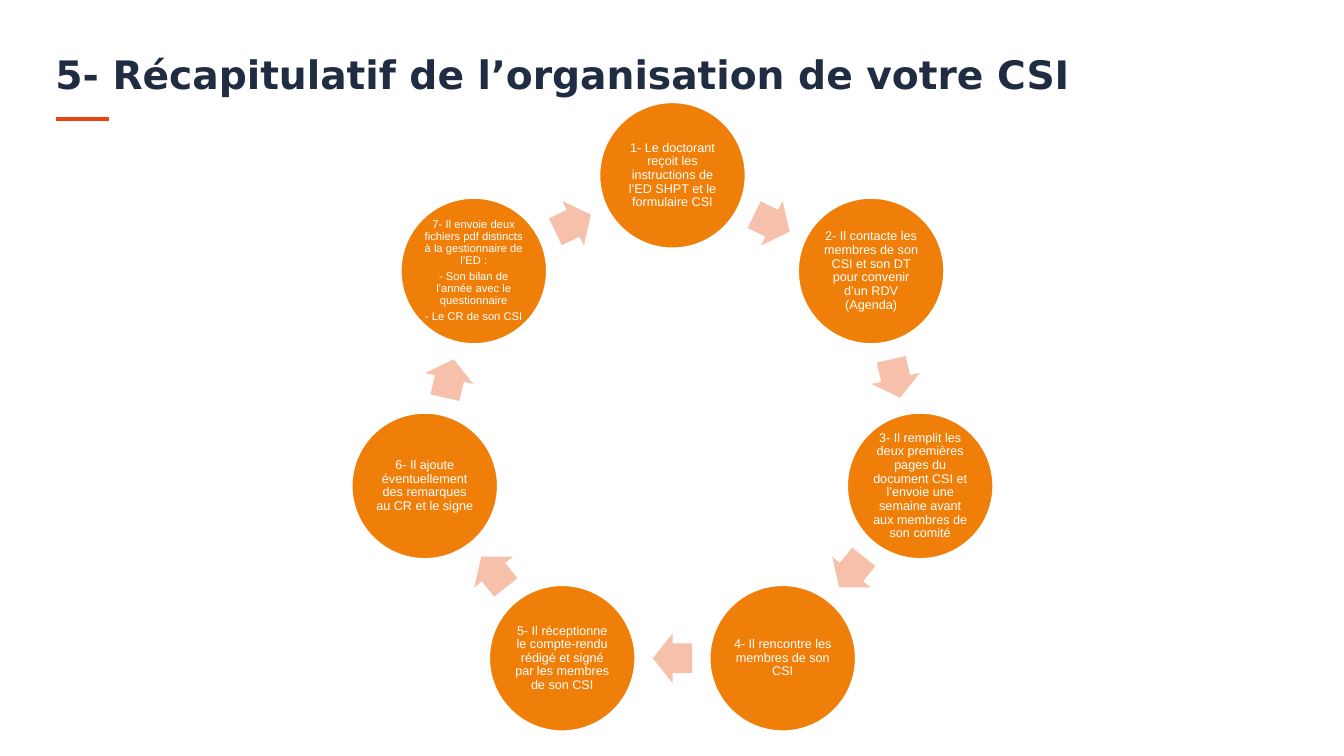
"""Build the slide that sums up the seven steps of the CSI as a cycle."""
from math import cos, pi, sin

from lxml import etree
from pptx import Presentation
from pptx.dml.color import RGBColor
from pptx.enum.shapes import MSO_CONNECTOR, MSO_SHAPE
from pptx.enum.text import MSO_ANCHOR, MSO_AUTO_SIZE, PP_ALIGN
from pptx.oxml.ns import qn
from pptx.util import Inches, Pt

OVAL, ARROW = MSO_SHAPE.OVAL, MSO_SHAPE.RIGHT_ARROW
LINE = MSO_CONNECTOR.STRAIGHT
TOP, MIDDLE = MSO_ANCHOR.TOP, MSO_ANCHOR.MIDDLE
LEFT, CENTER = PP_ALIGN.LEFT, PP_ALIGN.CENTER
NO_FIT = MSO_AUTO_SIZE.NONE

STEPS = [
    "1- Le doctorant reçoit les instructions de l’ED SHPT et le formulaire CSI",
    "2- Il contacte les membres de son CSI et son DT pour convenir d’un RDV (Agenda)",
    "3- Il remplit les deux premières pages du document CSI et l’envoie une semaine avant "
    "aux membres de son comité",
    "4- Il rencontre les membres de son CSI",
    "5- Il réceptionne le compte-rendu rédigé et signé par les membres de son CSI",
    "6- Il ajoute éventuellement des remarques au CR et le signe",
    "7- Il envoie deux fichiers pdf distincts à la gestionnaire de l’ED :\n"
    "- Son bilan de l’année avec le questionnaire\n"
    "- Le CR de son CSI",
]
MID_X, MID_Y, RADIUS = 6.67, 4.26, 2.52
DISC = 1.46
HEAD_W, HEAD_H = 0.39, 0.49
TURN = 2 * pi / len(STEPS)


def paint(color, text):
    color.rgb = RGBColor.from_string(text)


def place(kind, angle, reach, width, height, fill):
    x = MID_X + reach * sin(angle) - width / 2
    y = MID_Y - reach * cos(angle) - height / 2
    shape = slide.shapes.add_shape(kind, Inches(x), Inches(y), Inches(width), Inches(height))
    shape.shadow.inherit = False
    shape.fill.solid()
    paint(shape.fill.fore_color, fill)
    return shape


deck = Presentation()
deck.slide_width, deck.slide_height = Inches(13.33), Inches(7.5)
slide = deck.slides.add_slide(deck.slide_layouts[5])

title = slide.shapes.title
title.left, title.top = Inches(0.45), Inches(0.5)
title.width, title.height = Inches(10.46), Inches(0.83)
frame = title.text_frame
frame.text = "5- Récapitulatif de l’organisation de votre CSI"
frame.vertical_anchor, frame.auto_size = TOP, NO_FIT
head = frame.paragraphs[0]
head.alignment, head.line_spacing = LEFT, 0.9
font = head.runs[0].font
font.name, font.size, font.bold = "DejaVu Sans", Pt(28), True
paint(font.color, "202C41")

rule = slide.shapes.add_connector(LINE, Inches(0.56), Inches(1.18), Inches(1.08), Inches(1.18))
paint(rule.line.color, "E74610")
rule.line.width = Pt(2.25)
etree.SubElement(rule._element.spPr, qn("a:effectLst"))

for i, step in enumerate(STEPS):
    disc = place(OVAL, i * TURN, RADIUS, DISC, DISC, "F07F09")
    paint(disc.line.color, "FFFFFF")
    disc.line.width = Pt(2)
    frame = disc.text_frame
    frame.text = step
    frame.word_wrap, frame.vertical_anchor = True, MIDDLE
    frame.margin_left = frame.margin_right = Inches(0.02)
    frame.margin_top = frame.margin_bottom = Inches(0.01)
    size = 8 if "\n" in step else 9
    for para in frame.paragraphs:
        para.alignment, para.line_spacing = CENTER, 0.9
        para.space_after = Pt(0.35 * size)
        font = para.runs[0].font
        font.name, font.size = "Arial", Pt(size)
        paint(font.color, "FFFFFF")

    half = (i + 0.5) * TURN
    arrow = place(ARROW, half, RADIUS * cos(TURN / 2), HEAD_W, HEAD_H, "F6C0AB")
    arrow.line.fill.background()
    arrow.adjustments[0], arrow.adjustments[1] = 0.6, 0.5
    arrow.rotation = half * 180 / pi

deck.save("out.pptx")
